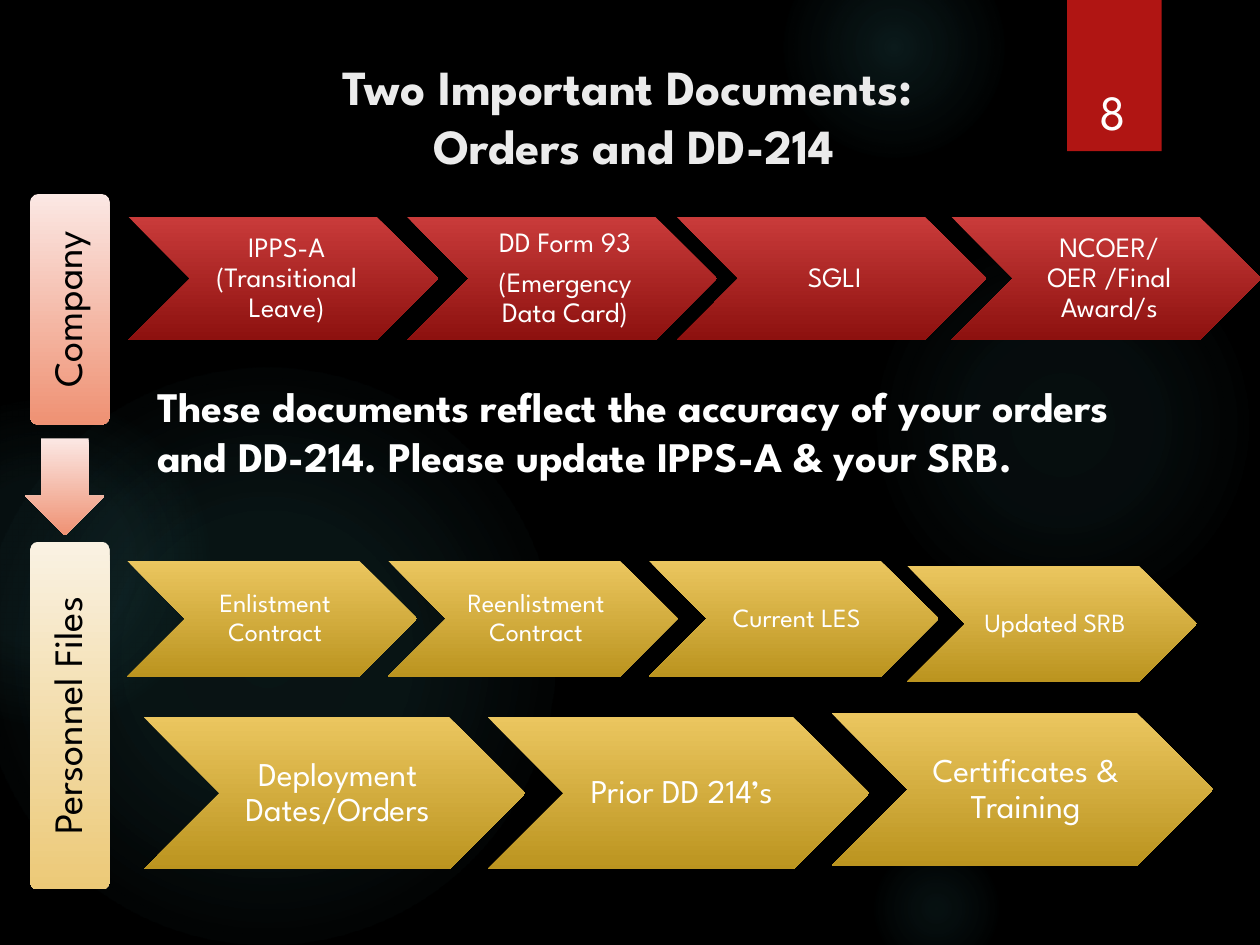
import lxml.etree
import pptx
import pptx.dml.color
import pptx.enum.shapes
import pptx.enum.text
import pptx.oxml
import pptx.oxml.ns
import pptx.util

Inches = pptx.util.Inches
Pt = pptx.util.Pt
Shape = pptx.enum.shapes.MSO_SHAPE
Align = pptx.enum.text.PP_ALIGN
Anchor = pptx.enum.text.MSO_ANCHOR
qn = pptx.oxml.ns.qn

FONT = "League Spartan"
WHITE = "FFFFFF"
RED = ("C93B3A", "8D110F")
GOLD = ("EBC65F", "BB941F")
PINK = ("FBE8E4", "EF9173")
CREAM = ("FAF2E3", "ECC977")
GLOW = "50B9C1"


def color(text):
    return pptx.dml.color.RGBColor.from_string(text)


def write(frame, text, size=16, ink=WHITE, bold=False, align=Align.CENTER,
          anchor=Anchor.TOP, space=None, after=0, inset=None):
    frame.word_wrap = True
    frame.vertical_anchor = anchor
    if inset:
        (frame.margin_left, frame.margin_top,
         frame.margin_right, frame.margin_bottom) = map(Inches, inset)
    frame.text = text
    for para in frame.paragraphs:
        para.alignment = align
        para.line_spacing = space
        para.space_after = Pt(after)
        for run in para.runs:
            run.font.name = FONT
            run.font.size = Pt(size)
            run.font.bold = bold
            run.font.color.rgb = color(ink)


def blend(shape, stops, mode):
    parts = "".join(
        f'<a:gs pos="{spot * 1000}"><a:srgbClr val="{ink}">'
        f'<a:alpha val="{alpha * 1000}"/></a:srgbClr></a:gs>'
        for spot, ink, alpha in stops)
    fill = pptx.oxml.parse_xml(
        f'<a:gradFill {pptx.oxml.ns.nsdecls("a")} rotWithShape="1">'
        f'<a:gsLst>{parts}</a:gsLst>{mode}</a:gradFill>')
    shape.fill.background()
    props = shape.element.spPr
    props.replace(props.find(qn("a:noFill")), fill)


class Deck:
    def __init__(self):
        self.show = pptx.Presentation()
        self.show.slide_width = Inches(10)
        self.show.slide_height = Inches(7.5)
        self.slide = self.show.slides.add_slide(self.show.slide_layouts[6])
        back = self.slide.background.fill
        back.solid()
        back.fore_color.rgb = color("000000")

    def shape(self, kind, x, y, w, h):
        shape = self.slide.shapes.add_shape(kind, *map(Inches, (x, y, w, h)))
        shape.shadow.inherit = False
        shape.line.fill.background()
        return shape

    def glow(self, x, y, size, core, mid, edge):
        shape = self.shape(Shape.OVAL, x, y, size, size)
        stops = [(0, GLOW, core), (36, GLOW, mid), (edge, GLOW, 0)]
        blend(shape, stops, '<a:path path="circle"><a:fillToRect '
              'l="50000" t="50000" r="50000" b="50000"/></a:path>')

    def shade(self, kind, x, y, w, h, pair, angle=90):
        shape = self.shape(kind, x, y, w, h)
        stops = [(0, pair[0], 100), (100, pair[1], 100)]
        blend(shape, stops, f'<a:lin ang="{angle * 60000}" scaled="0"/>')
        return shape

    def step(self, x, y, w, h, text, pair, size, pad):
        shape = self.shade(Shape.CHEVRON, x, y, w, h, pair)
        write(shape.text_frame, text, size, anchor=Anchor.MIDDLE, space=0.9,
              after=round(size * 0.35, 1), inset=pad)

    def bar(self, y, h, text, pair):
        shape = self.shade(Shape.ROUNDED_RECTANGLE, 0.24, y, 0.63, h, pair)
        shape.adjustments[0] = 0.1
        frame = shape.text_frame
        write(frame, text, 23, "000000", anchor=Anchor.MIDDLE, space=0.9,
              inset=(0.1, 0.1, 0.1, 0.1))
        frame._txBody.bodyPr.set("vert", "vert270")

    def arrow(self, x, y, w, h, pair):
        shape = self.shade(Shape.RIGHT_ARROW, x, y, w, h, pair, angle=0)
        shape.rotation = 90
        shape.adjustments[0] = 0.6
        shape.adjustments[1] = 0.5

    def tab(self, x, y, w, h, ink):
        shape = self.shape(Shape.RECTANGLE, x, y, w, h)
        shape.fill.solid()
        shape.fill.fore_color.rgb = color(ink)

    def text(self, x, y, w, h, text, **style):
        box = self.slide.shapes.add_textbox(*map(Inches, (x, y, w, h)))
        write(box.text_frame, text, **style)


def main():
    deck = Deck()
    for spot in [(6.89, 1.83, 3.08, 7, 6, 69), (6.22, -0.5, 1.75, 14, 7, 73),
                 (6.89, 6.67, 1.08, 9, 5, 66), (-0.17, 2.92, 4.58, 11, 10, 75),
                 (-0.92, 3.17, 2.58, 8, 8, 72)]:
        deck.glow(*spot)

    deck.tab(8.47, 0, 0.75, 1.2, "B01513")
    deck.text(0.3, 0.4, 9.46, 1.25,
              "Two Important Documents: \vOrders and DD-214",
              size=28, ink="EBEBEB", bold=True)
    deck.text(8.49, 0.32, 0.69, 0.84, "8", size=28, anchor=Anchor.BOTTOM)

    slim = (0.07, 0.02, 0.02, 0.02)
    wide = (0.08, 0.03, 0.03, 0.03)
    rows = [
        (2.46, 0.98, RED, 16, slim, [
            (1.02, 1.72, "IPPS-A (Transitional Leave)"),
            (3.23, 1.72, "DD Form 93\n(Emergency Data Card)"),
            (5.37, 1.72, "SGLI"),
            (7.55, 1.72, "NCOER/ OER /Final Award/s")]),
        (2.3, 0.92, GOLD, 15, slim, [
            (1.01, 4.45, "Enlistment Contract"),
            (3.08, 4.45, "Reenlistment Contract"),
            (5.15, 4.45, "Current LES"),
            (7.2, 4.49, "Updated SRB")]),
        (3.03, 1.21, GOLD, 19, wide, [
            (1.14, 5.69, "Deployment Dates/Orders"),
            (3.87, 5.69, "Prior DD 214’s"),
            (6.6, 5.66, "Certificates & Training")]),
    ]
    for w, h, pair, size, pad, steps in rows:
        for x, y, text in steps:
            deck.step(x, y, w, h, text, pair, size, pad)

    deck.bar(1.54, 1.83, "Company", PINK)
    deck.arrow(0.13, 3.55, 0.77, 0.63, PINK)
    deck.bar(4.3, 2.76, "Personnel Files", CREAM)
    deck.text(1.15, 2.97, 8.21, 1.31,
              "These documents reflect the accuracy of your orders and DD-214. "
              "Please update IPPS-A & your SRB.",
              size=24, bold=True, align=Align.LEFT)
    deck.show.save("out.pptx")


if __name__ == "__main__":
    main()
